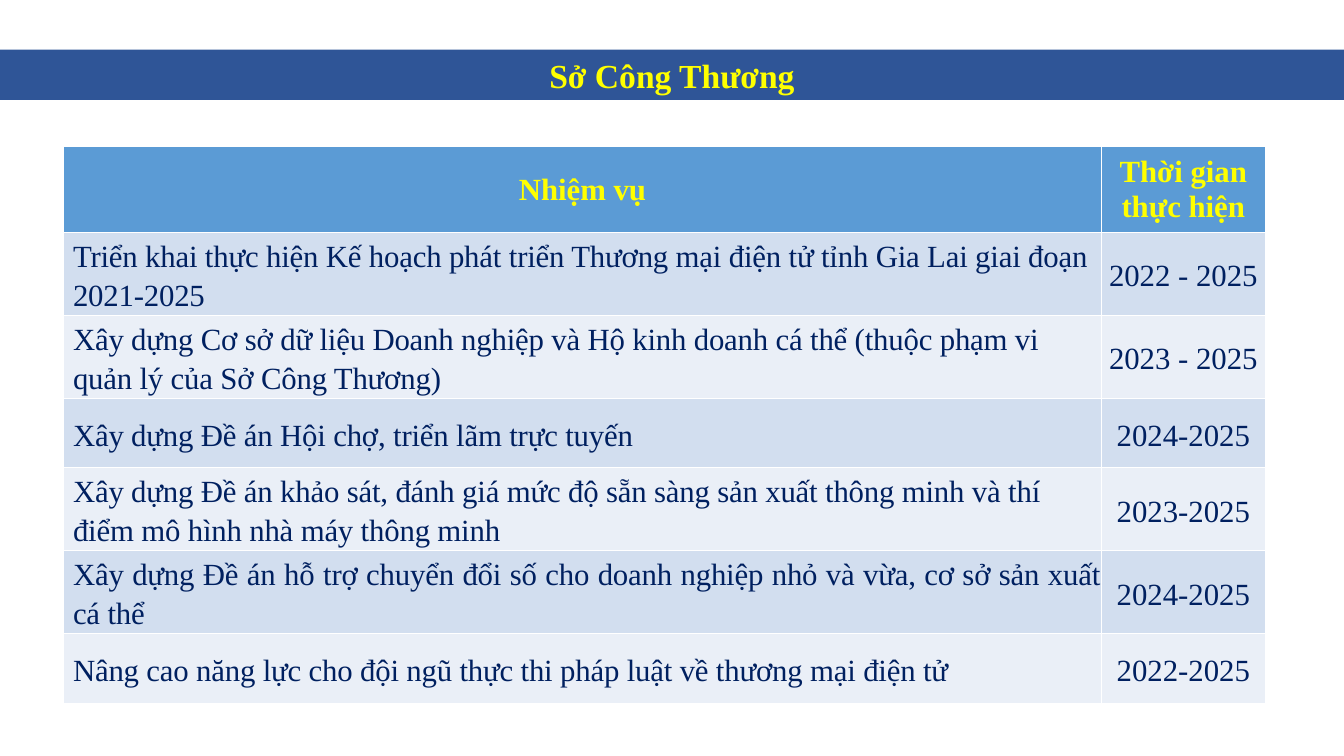
from lxml.etree import SubElement
from pptx import Presentation
from pptx.dml.color import RGBColor
from pptx.enum.shapes import MSO_SHAPE as Shape
from pptx.enum.text import MSO_ANCHOR as Anchor, PP_ALIGN as Align
from pptx.oxml.ns import qn
from pptx.util import Cm, Pt

FONT = "Times New Roman"
BANNER_BLUE = RGBColor(0x2F, 0x55, 0x97)
HEADER_BLUE = RGBColor(0x5B, 0x9B, 0xD5)
BANDS = RGBColor(0xD2, 0xDE, 0xEF), RGBColor(0xEA, 0xEF, 0xF7)
NAVY = RGBColor(0x00, 0x20, 0x60)
YELLOW = RGBColor(0xFF, 0xFF, 0x00)
GOLD = RGBColor(0xFF, 0xC0, 0x00)

COLUMN_WIDTHS = 26.14, 4.14
TALL, SHORT, HEADER_HEIGHT = 2.09, 1.75, 2.16
HEADINGS = "Nhiệm vụ", "Thời gian thực hiện"
TASKS = [
    ("Triển khai thực hiện Kế hoạch phát triển Thương mại điện tử tỉnh Gia Lai giai đoạn 2021-2025",
     "2022 - 2025", TALL, Align.LEFT),
    ("Xây dựng Cơ sở dữ liệu Doanh nghiệp và Hộ kinh doanh cá thể (thuộc phạm vi quản lý của Sở Công Thương)",
     "2023 - 2025", TALL, Align.LEFT),
    ("Xây dựng Đề án Hội chợ, triển lãm trực tuyến",
     "2024-2025", SHORT, Align.LEFT),
    ("Xây dựng Đề án khảo sát, đánh giá mức độ sẵn sàng sản xuất thông minh và thí điểm mô hình nhà máy thông minh",
     "2023-2025", TALL, Align.LEFT),
    ("Xây dựng Đề án hỗ trợ chuyển đổi số cho doanh nghiệp nhỏ và vừa, cơ sở sản xuất cá thể",
     "2024-2025", TALL, Align.JUSTIFY),
    ("Nâng cao năng lực cho đội ngũ thực thi pháp luật về thương mại điện tử",
     "2022-2025", SHORT, Align.JUSTIFY),
]


def write_text(frame, text, size=22, color=NAVY, bold=False, align=Align.CENTER,
               line_spacing=None, space_after=None, indent=None, tracking=None, outline=None):
    paragraph = frame.paragraphs[0]
    paragraph.alignment = align
    if line_spacing:
        paragraph.line_spacing = line_spacing
        paragraph.space_before = Pt(0)
        paragraph.space_after = Pt(space_after or 0)
    if indent:
        properties = paragraph._p.get_or_add_pPr()
        properties.set("marL", str(Cm(indent)))
        properties.set("indent", "0")
    run = paragraph.add_run()
    run.text = text
    run.font.name = FONT
    run.font.size = Pt(size)
    run.font.bold = bold
    run.font.color.rgb = color
    run_properties = run.font._element
    if tracking:
        run_properties.set("spc", str(tracking))
    if outline:
        line = SubElement(run_properties, qn("a:ln"), w=str(Pt(1)))
        fill = SubElement(line, qn("a:solidFill"))
        SubElement(fill, qn("a:srgbClr"), val=str(outline))
        run_properties.insert(0, line)


class TaskSlide:
    """Holds the style and the current slide, and draws its elements."""

    def __init__(self, presentation):
        self.slide = presentation.slides.add_slide(presentation.slide_layouts[6])
        self.width = presentation.slide_width

    def banner(self, text, top, height):
        shape = self.slide.shapes.add_shape(Shape.RECTANGLE, 0, Cm(top), self.width, Cm(height))
        shape.shadow.inherit = False
        shape.fill.solid()
        shape.fill.fore_color.rgb = BANNER_BLUE
        shape.line.fill.background()
        shape.text_frame.vertical_anchor = Anchor.MIDDLE
        write_text(shape.text_frame, text, size=24, color=YELLOW, bold=True, outline=GOLD)

    def cell(self, cell, text, fill, margin=None, **text_format):
        cell.fill.solid()
        cell.fill.fore_color.rgb = fill
        cell.vertical_anchor = Anchor.MIDDLE
        if margin is not None:
            cell.margin_left = cell.margin_right = Cm(margin)
            cell.margin_top = cell.margin_bottom = Cm(margin)
        write_text(cell.text_frame, text, **text_format)

    def table(self, left, top):
        heights = [HEADER_HEIGHT] + [height for _, _, height, _ in TASKS]
        table = self.slide.shapes.add_table(
            len(heights), len(COLUMN_WIDTHS), Cm(left), Cm(top),
            Cm(sum(COLUMN_WIDTHS)), Cm(sum(heights))).table
        for column, width in zip(table.columns, COLUMN_WIDTHS):
            column.width = Cm(width)
        for row, height in zip(table.rows, heights):
            row.height = Cm(height)
        for index, heading in enumerate(HEADINGS):
            self.cell(table.cell(0, index), heading, HEADER_BLUE, color=YELLOW, bold=True)
        body = dict(margin=0, line_spacing=1.15, space_after=3)
        for index, (task, period, _, align) in enumerate(TASKS):
            band = BANDS[index % 2]
            self.cell(table.cell(index + 1, 0), task, band, align=align,
                      indent=0.23, tracking=-10, **body)
            self.cell(table.cell(index + 1, 1), period, band, **body)


def main():
    presentation = Presentation()
    presentation.slide_width = Cm(33.87)
    presentation.slide_height = Cm(19.05)
    task_slide = TaskSlide(presentation)
    task_slide.banner("Sở Công Thương", top=1.25, height=1.27)
    task_slide.table(left=1.61, top=3.7)
    presentation.save("out.pptx")


if __name__ == "__main__":
    main()
